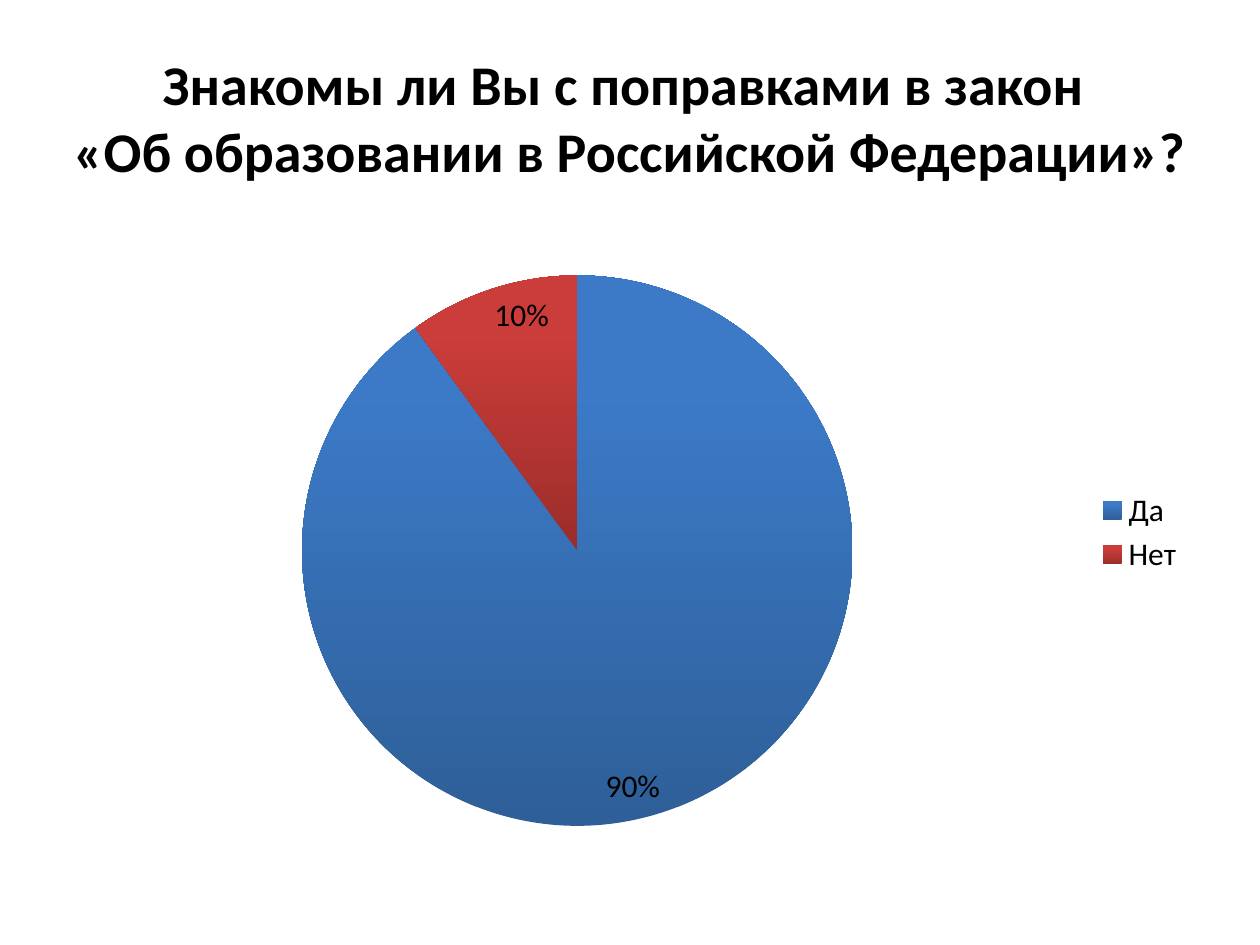
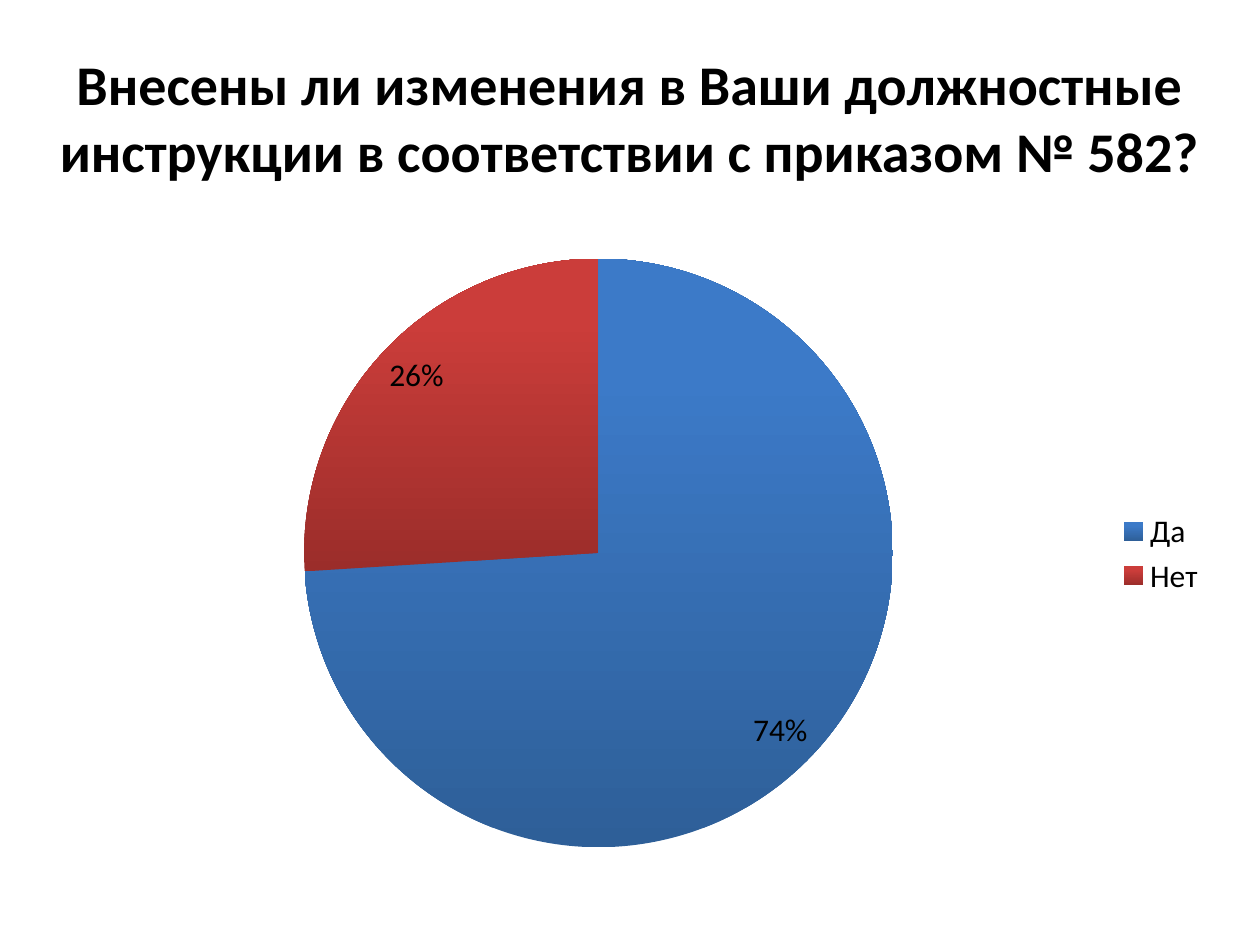
from dataclasses import dataclass

from lxml import etree
from pptx import Presentation
from pptx import util as u
from pptx.chart import data as chart_data
from pptx.dml import color
from pptx.enum import chart as ch, text
from pptx.oxml import ns

COLORS = {
    "background": "FFFFFF",
    "text": "000000",
    "yes_dark": "2E5F98",
    "yes_light": "3C7AC8",
    "no_dark": "9B2D2A",
    "no_light": "CB3D3A",
}
FONT = "Calibri"
SLIDE_WIDTH, SLIDE_HEIGHT = 720, 540
TITLE_TOP, TITLE_HEIGHT, TITLE_SIZE = 21.6, 90, 32
CHART_WIDTH, CHART_HEIGHT, CHART_SIZE = 648, 356.4, 18


@dataclass
class Answer:
    label: str
    dark: str
    light: str


@dataclass
class Question:
    title_lines: tuple[str, ...]
    percentages: tuple[int, ...]
    chart_left: float
    chart_top: float
    pie_left: float
    pie_top: float
    pie_diameter: float


ANSWERS = (
    Answer("Да", "yes_dark", "yes_light"),
    Answer("Нет", "no_dark", "no_light"),
)
QUESTIONS = (
    Question(
        ("Знакомы ли Вы с поправками в закон ",
         "«Об образовании в Российской Федерации»?"),
        (90, 10), 36, 126, 172.6, 157.4, 314.6,
    ),
    Question(
        ("Внесены ли изменения в Ваши должностные "
         "инструкции в соответствии с приказом № 582?",),
        (74, 26), 48.24, 138.24, 173.8, 147.8, 336.4,
    ),
)


def rgb(name: str) -> color.RGBColor:
    return color.RGBColor.from_string(COLORS[name])


def style_font(font, size: float, bold: bool = False) -> None:
    font.name = FONT
    font.size = u.Pt(size)
    font.bold = bold
    font.color.rgb = rgb("text")


def add_title(slide, lines: tuple[str, ...]) -> None:
    box = slide.shapes.add_textbox(
        0, u.Pt(TITLE_TOP), u.Pt(SLIDE_WIDTH), u.Pt(TITLE_HEIGHT))
    frame = box.text_frame
    frame.word_wrap = True
    frame.vertical_anchor = text.MSO_ANCHOR.MIDDLE
    paragraph = frame.paragraphs[0]
    paragraph.alignment = text.PP_ALIGN.CENTER
    for number, line in enumerate(lines):
        if number:
            paragraph.add_line_break()
        run = paragraph.add_run()
        run.text = line
        style_font(run.font, TITLE_SIZE, bold=True)


def place_pie(chart, question: Question) -> None:
    """Fix the pie's place as fractions of the chart area."""
    plot_area = chart._chartSpace.chart.plotArea
    for layout in plot_area.findall(ns.qn("c:layout")):
        plot_area.remove(layout)
    layout = etree.Element(ns.qn("c:layout"))
    manual = etree.SubElement(layout, ns.qn("c:manualLayout"))
    settings = {
        "layoutTarget": "inner",
        "xMode": "edge",
        "yMode": "edge",
        "x": (question.pie_left - question.chart_left) / CHART_WIDTH,
        "y": (question.pie_top - question.chart_top) / CHART_HEIGHT,
        "w": question.pie_diameter / CHART_WIDTH,
        "h": question.pie_diameter / CHART_HEIGHT,
    }
    for tag, value in settings.items():
        etree.SubElement(manual, ns.qn(f"c:{tag}"), val=str(value))
    plot_area.insert(0, layout)


def fill_slice(point, answer: Answer) -> None:
    fill = point.format.fill
    fill.gradient()
    fill.gradient_angle = 90
    dark, light = fill.gradient_stops
    dark.color.rgb = rgb(answer.dark)
    light.color.rgb = rgb(answer.light)
    light.position = 0.8
    point.format.line.fill.background()


def add_pie(slide, question: Question) -> None:
    data = chart_data.CategoryChartData()
    data.categories = [answer.label for answer in ANSWERS]
    data.add_series("Series 1", question.percentages)
    chart = slide.shapes.add_chart(
        ch.XL_CHART_TYPE.PIE, u.Pt(question.chart_left), u.Pt(question.chart_top),
        u.Pt(CHART_WIDTH), u.Pt(CHART_HEIGHT), data).chart
    style_font(chart.font, CHART_SIZE)
    chart.has_title = False
    place_pie(chart, question)

    # Legend
    chart.has_legend = True
    chart.legend.position = ch.XL_LEGEND_POSITION.RIGHT
    chart.legend.include_in_layout = False

    # Slices and their percentages
    plot = chart.plots[0]
    plot.vary_by_categories = True
    for index, answer in enumerate(ANSWERS):
        fill_slice(plot.series[0].points[index], answer)
    plot.has_data_labels = True
    labels = plot.data_labels
    labels.show_percentage = True
    labels.show_value = False
    labels.number_format = "0%"
    labels.number_format_is_linked = False
    labels.position = ch.XL_LABEL_POSITION.INSIDE_END
    style_font(labels.font, CHART_SIZE)


def main() -> None:
    presentation = Presentation()
    presentation.slide_width = u.Pt(SLIDE_WIDTH)
    presentation.slide_height = u.Pt(SLIDE_HEIGHT)
    background = presentation.slide_master.background.fill
    background.solid()
    background.fore_color.rgb = rgb("background")
    for question in QUESTIONS:
        slide = presentation.slides.add_slide(presentation.slide_layouts[6])
        add_title(slide, question.title_lines)
        add_pie(slide, question)
    presentation.save("out.pptx")


if __name__ == "__main__":
    main()
